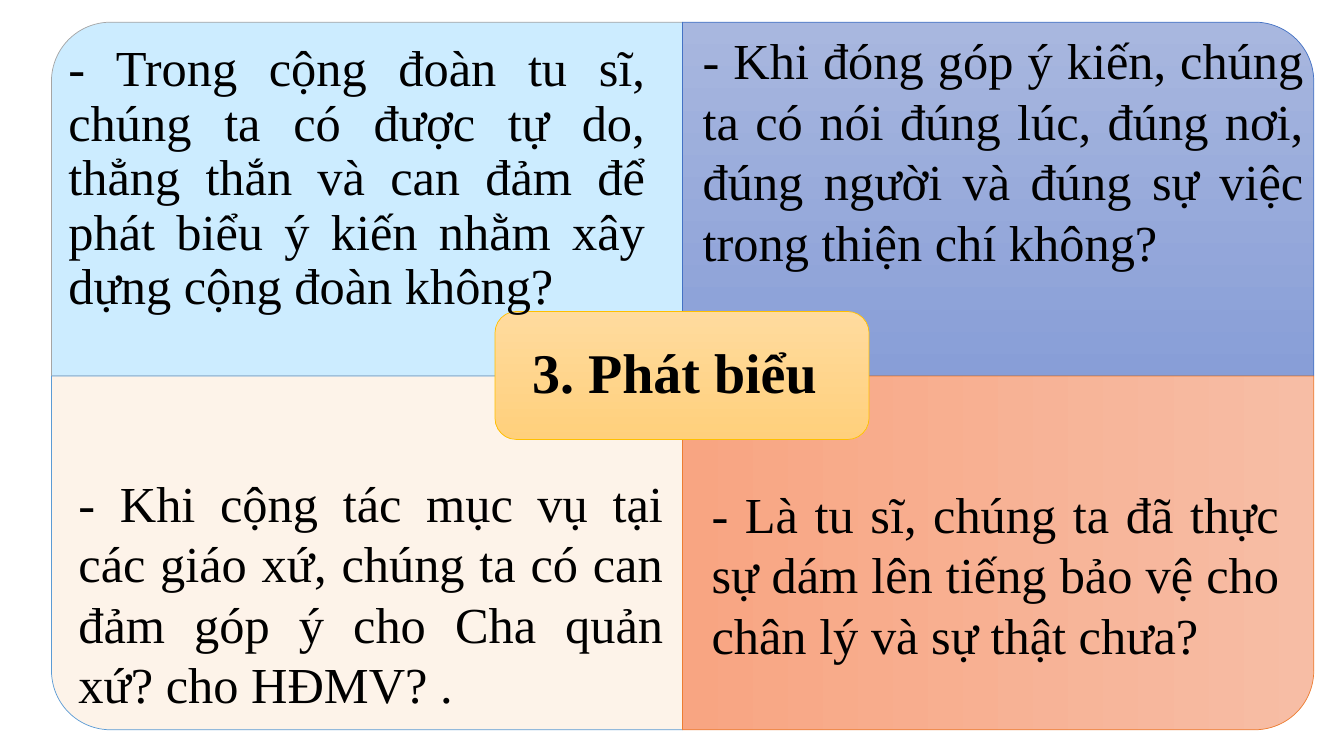
from pptx import Presentation
from pptx.dml.color import RGBColor
from pptx.enum.shapes import MSO_SHAPE as Shape
from pptx.enum.text import MSO_ANCHOR as Anchor, MSO_AUTO_SIZE as AutoSize, PP_ALIGN as Align
from pptx.util import Inches, Pt

COLORS = {
    "text": "000000",
    "sky": "CCECFF", "sky_line": "A5A5A5",
    "blue_light": "A8B7DF", "blue_deep": "889ED7", "blue_line": "4472C4",
    "cream": "FDF3E9", "cream_line": "5B9BD5",
    "coral_light": "F7BDA5", "coral_deep": "F8A582", "coral_line": "ED7D31",
    "gold_light": "FFDB9E", "gold_deep": "FFD07C", "gold_line": "FFC000",
}

LEFT, TOP, WIDTH, HEIGHT = 3.83, 2.93, 46.96, 46.8

QUADRANTS = [
    (0, 0, 270, ["sky"], "sky_line"),
    (1, 0, 0, ["blue_light", "blue_deep"], "blue_line"),
    (0, 1, 180, ["cream"], "cream_line"),
    (1, 1, 90, ["coral_light", "coral_deep"], "coral_line"),
]

QUESTIONS = [
    ((51.54, 3.2, 46.21, 42.67), 1.0,
     "- Khi đóng góp ý kiến, chúng ta có nói đúng lúc, đúng nơi, đúng người "
     "và đúng sự việc trong thiện chí không?"),
    ((4.35, 5.07, 44.41, 44.53), 0.9,
     "- Trong cộng đoàn tu sĩ, chúng ta có được tự do, thẳng thắn và can đảm "
     "để phát biểu ý kiến nhằm xây dựng cộng đoàn không?"),
    ((5.1, 61.73, 45.01, 33.6), 1.0,
     "- Khi cộng tác mục vụ tại các giáo xứ, chúng ta có can\v"
     "đảm góp ý cho Cha quản xứ? cho HĐMV? ."),
    ((52.21, 63.2, 43.74, 33.6), 1.0,
     "- Là tu sĩ, chúng ta đã thực sự dám lên tiếng bảo vệ cho chân lý "
     "và sự thật chưa?"),
]


class SlideBuilder:
    font = "Times New Roman"

    def __init__(self, deck):
        self.deck = deck
        self.page = deck.slides.add_slide(deck.slide_layouts[5])

    def place(self, left, top, width, height):
        across, down = self.deck.slide_width / 100, self.deck.slide_height / 100
        return [int(left * across), int(top * down), int(width * across), int(height * down)]

    def panel(self, kind, area, colors, line, turn=0):
        left, top, width, height = self.place(*area)
        if turn in (90, 270):
            left, top = left + (width - height) // 2, top + (height - width) // 2
            width, height = height, width
        panel = self.page.shapes.add_shape(kind, left, top, width, height)
        panel.rotation = turn
        panel.shadow.inherit = False
        if len(colors) == 1:
            panel.fill.solid()
            panel.fill.fore_color.rgb = RGBColor.from_string(COLORS[colors[0]])
        else:
            panel.fill.gradient()
            panel.fill.gradient_angle = 270
            for stop, color in zip(panel.fill.gradient_stops, colors):
                stop.color.rgb = RGBColor.from_string(COLORS[color])
        panel.line.color.rgb = RGBColor.from_string(COLORS[line])
        panel.line.width = Pt(0.5)

    def fill_text(self, box, text, size, align, spacing, bold=False):
        box.text_frame.word_wrap = True
        para = box.text_frame.paragraphs[0]
        para.text = text
        para.alignment = align
        para.line_spacing = spacing
        for span in para.runs:
            span.font.name = self.font
            span.font.size = Pt(size)
            span.font.bold = bold
            span.font.color.rgb = RGBColor.from_string(COLORS["text"])

    def question(self, area, spacing, text):
        box = self.page.shapes.add_textbox(*self.place(*area))
        self.fill_text(box, text, 36, Align.JUSTIFY, spacing)
        box.text_frame.auto_size = AutoSize.SHAPE_TO_FIT_TEXT

    def title(self, area, text):
        title = self.page.shapes.title
        title.left, title.top, title.width, title.height = self.place(*area)
        frame = title.text_frame
        frame.auto_size = AutoSize.NONE
        frame.vertical_anchor = Anchor.MIDDLE
        frame.margin_left = frame.margin_top = frame.margin_bottom = Inches(0.17)
        frame.margin_right = Inches(0.31)
        self.fill_text(title, text, 40, Align.CENTER, 0.9, bold=True)
        self.page.shapes.element.append(title.element)


def main():
    deck = Presentation()
    deck.slide_width, deck.slide_height = Inches(13.33), Inches(7.5)
    builder = SlideBuilder(deck)
    for column, row, turn, colors, line in QUADRANTS:
        area = (LEFT + column * WIDTH, TOP + row * HEIGHT, WIDTH, HEIGHT)
        builder.panel(Shape.ROUND_1_RECTANGLE, area, colors, line, turn)
    builder.panel(Shape.ROUNDED_RECTANGLE, (36.83, 41.2, 27.83, 16.93),
                  ["gold_light", "gold_deep"], "gold_line")
    builder.title((37.28, 42, 26.86, 15.2), "3. Phát biểu")
    for area, spacing, text in QUESTIONS:
        builder.question(area, spacing, text)
    deck.save("out.pptx")


if __name__ == "__main__":
    main()
